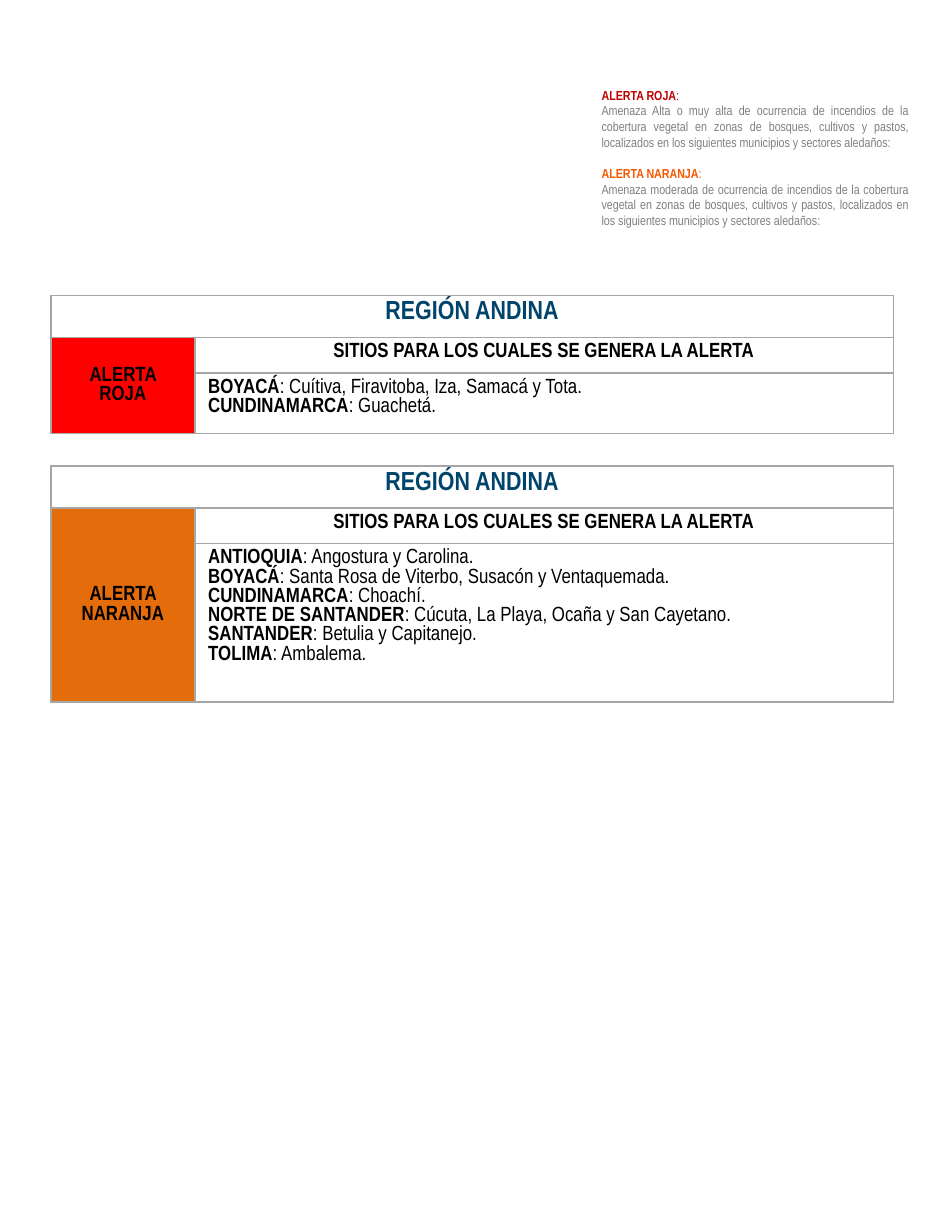
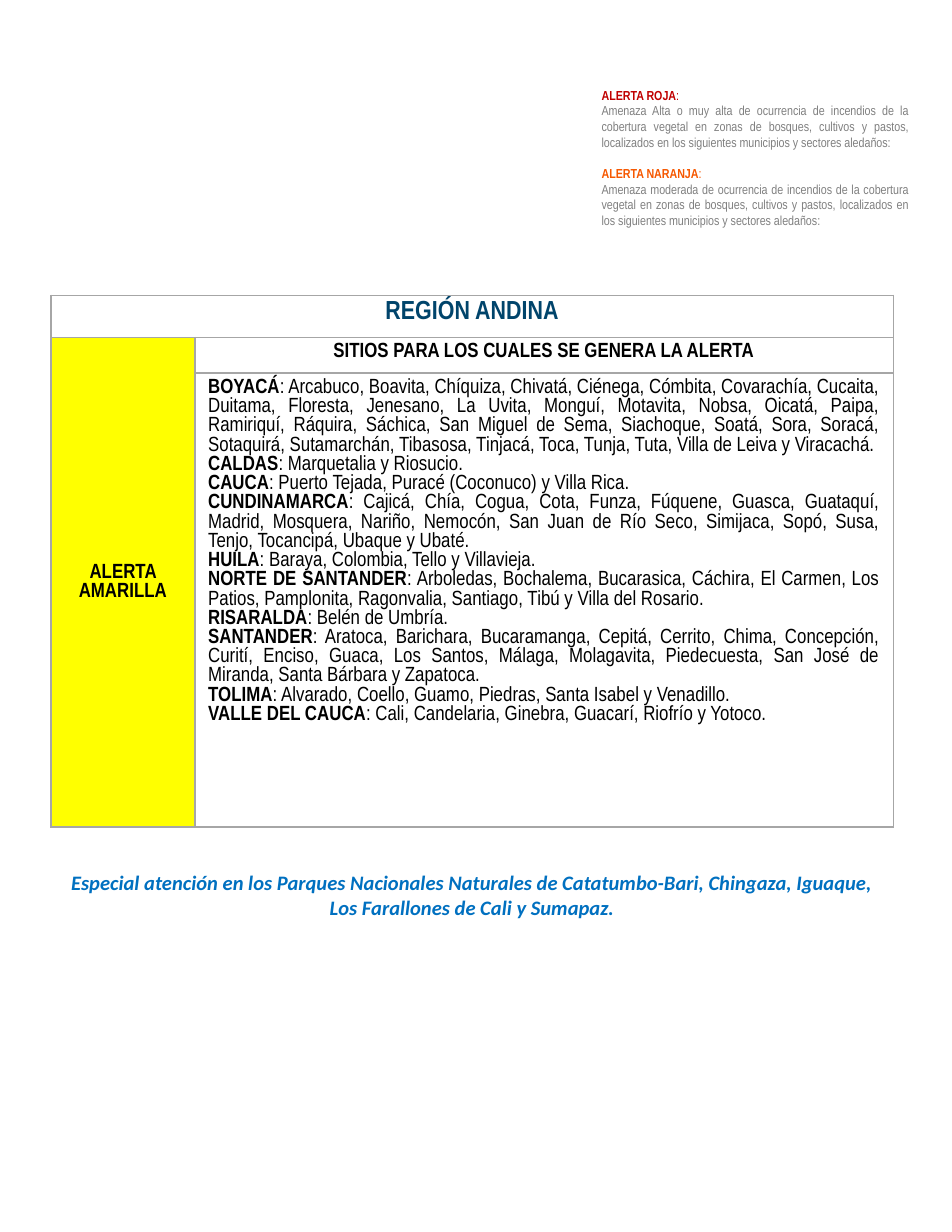
from dataclasses import dataclass

from lxml import etree
from pptx import Presentation
from pptx.dml.color import RGBColor
from pptx.enum.text import MSO_ANCHOR, MSO_AUTO_SIZE, PP_ALIGN
from pptx.oxml.ns import qn
from pptx.util import Inches, Pt

LEFT, CENTER, JUSTIFY = PP_ALIGN.LEFT, PP_ALIGN.CENTER, PP_ALIGN.JUSTIFY
MIDDLE, TOP = MSO_ANCHOR.MIDDLE, MSO_ANCHOR.TOP
FIT_SHAPE = MSO_AUTO_SIZE.SHAPE_TO_FIT_TEXT


@dataclass(frozen=True)
class Theme:
    font: str = "Arial Narrow"
    note_font: str = "Calibri"
    legend_size: float = 7
    body_size: float = 11
    region_size: float = 14
    legend_gap: float = 8.4
    black: str = "000000"
    gray: str = "808080"
    border: str = "A6A6A6"
    region: str = "00446B"
    note: str = "0070C0"
    legend_red: str = "C00000"
    legend_orange: str = "F65800"
    red: str = "FF0000"
    orange: str = "E46C0A"
    yellow: str = "FFFF00"


THEME = Theme()
MM_PER_INCH = 25.4
PAGE_WIDTH, PAGE_HEIGHT = 180 / MM_PER_INCH, 233 / MM_PER_INCH
TABLE_LEFT, TABLE_TOP, TABLE_GAP = 0.38, 2.2, 0.25
COLUMNS = (1.07, 5.2)
HEADER_ROWS = (0.31, 0.26)

REGION = "REGIÓN ANDINA"
SITES_HEADING = "SITIOS PARA LOS CUALES SE GENERA LA ALERTA"
LEGEND = [
    ("ALERTA ROJA", THEME.legend_red,
     "Amenaza Alta o muy alta de ocurrencia de incendios de la cobertura vegetal en zonas de "
     "bosques, cultivos y pastos, localizados en los siguientes municipios y sectores aledaños:"),
    ("ALERTA NARANJA", THEME.legend_orange,
     "Amenaza moderada de ocurrencia de incendios de la cobertura vegetal en zonas de "
     "bosques, cultivos y pastos, localizados en los siguientes municipios y sectores aledaños:"),
]
RED_SITES = [
    ("BOYACÁ", "Cuítiva, Firavitoba, Iza, Samacá y Tota."),
    ("CUNDINAMARCA", "Guachetá."),
]
ORANGE_SITES = [
    ("ANTIOQUIA", "Angostura y Carolina."),
    ("BOYACÁ", "Santa Rosa de Viterbo, Susacón y Ventaquemada."),
    ("CUNDINAMARCA", "Choachí."),
    ("NORTE DE SANTANDER", "Cúcuta, La Playa, Ocaña y San Cayetano."),
    ("SANTANDER", "Betulia y Capitanejo."),
    ("TOLIMA", "Ambalema."),
]
YELLOW_SITES = [
    ("BOYACÁ",
     "Arcabuco, Boavita, Chíquiza, Chivatá, Ciénega, Cómbita, Covarachía, Cucaita, Duitama, "
     "Floresta, Jenesano, La Uvita, Monguí, Motavita, Nobsa, Oicatá, Paipa, Ramiriquí, Ráquira, "
     "Sáchica, San Miguel de Sema, Siachoque, Soatá, Sora, Soracá, Sotaquirá, Sutamarchán, "
     "Tibasosa, Tinjacá, Toca, Tunja, Tuta, Villa de Leiva y Viracachá."),
    ("CALDAS", "Marquetalia y Riosucio."),
    ("CAUCA", "Puerto Tejada, Puracé (Coconuco) y Villa Rica."),
    ("CUNDINAMARCA",
     "Cajicá, Chía, Cogua, Cota, Funza, Fúquene, Guasca, Guataquí, Madrid, Mosquera, Nariño, "
     "Nemocón, San Juan de Río Seco, Simijaca, Sopó, Susa, Tenjo, Tocancipá, Ubaque y Ubaté."),
    ("HUILA", "Baraya, Colombia, Tello y Villavieja."),
    ("NORTE DE SANTANDER",
     "Arboledas, Bochalema, Bucarasica, Cáchira, El Carmen, Los Patios, Pamplonita, "
     "Ragonvalia, Santiago, Tibú y Villa del Rosario."),
    ("RISARALDA", "Belén de Umbría."),
    ("SANTANDER",
     "Aratoca, Barichara, Bucaramanga, Cepitá, Cerrito, Chima, Concepción, Curití, Enciso, "
     "Guaca, Los Santos, Málaga, Molagavita, Piedecuesta, San José de Miranda, Santa Bárbara "
     "y Zapatoca."),
    ("TOLIMA", "Alvarado, Coello, Guamo, Piedras, Santa Isabel y Venadillo."),
    ("VALLE DEL CAUCA", "Cali, Candelaria, Ginebra, Guacarí, Riofrío y Yotoco."),
]
PARKS_NOTE = ("Especial atención en los Parques Nacionales Naturales de Catatumbo-Bari, "
              "Chingaza, Iguaque, Los Farallones de Cali y Sumapaz.")
PAGES = [
    {"alerts": [("ALERTA ROJA", THEME.red, RED_SITES, 0.45),
                ("ALERTA NARANJA", THEME.orange, ORANGE_SITES, 1.18)]},
    {"alerts": [("ALERTA AMARILLA", THEME.yellow, YELLOW_SITES, 3.38)], "note": PARKS_NOTE},
]


def write_paragraph(frame, index, spans, size, align, font=THEME.font, italic=False):
    para = frame.paragraphs[0] if index == 0 else frame.add_paragraph()
    para.alignment = align
    for text, color, bold in spans:
        span = para.add_run()
        span.text = text
        span.font.name = font
        span.font.size = Pt(size)
        span.font.bold = bold
        span.font.italic = italic
        span.font.color.rgb = RGBColor.from_string(color)
    return para


def add_text_box(page, left, top, width, height):
    box = page.shapes.add_textbox(Inches(left), Inches(top), Inches(width), Inches(height))
    box.text_frame.word_wrap = True
    box.text_frame.auto_size = FIT_SHAPE
    return box.text_frame


def add_legend(page):
    frame = add_text_box(page, 4.38, 0.6, 2.48, 1.16)
    for index, (name, color, meaning) in enumerate(LEGEND):
        heading = write_paragraph(frame, 2 * index, [(name, color, True), (":", color, False)],
                                  THEME.legend_size, LEFT)
        if index:
            heading.space_before = Pt(THEME.legend_gap)
        write_paragraph(frame, 2 * index + 1, [(meaning, THEME.gray, False)],
                        THEME.legend_size, JUSTIFY)


def style_cell(cell):
    properties = cell._tc.get_or_add_tcPr()
    for side in ("a:lnL", "a:lnR", "a:lnT", "a:lnB"):
        line = etree.SubElement(properties, qn(side), w=str(Pt(1)))
        fill = etree.SubElement(line, qn("a:solidFill"))
        etree.SubElement(fill, qn("a:srgbClr"), val=THEME.border)
    cell.fill.background()
    cell.margin_left = cell.margin_right = Inches(0.1)
    cell.margin_top = cell.margin_bottom = Inches(0.04)
    cell.vertical_anchor = TOP


def add_alert_table(page, top, name, color, sites, sites_height):
    rows = (*HEADER_ROWS, sites_height)
    table = page.shapes.add_table(len(rows), len(COLUMNS), Inches(TABLE_LEFT), Inches(top),
                                  Inches(sum(COLUMNS)), Inches(sum(rows))).table
    table.first_row = table.horz_banding = False
    for column, width in zip(table.columns, COLUMNS):
        column.width = Inches(width)
    for row, height in zip(table.rows, rows):
        row.height = Inches(height)
    for cell in table.iter_cells():
        style_cell(cell)

    region, alert = table.cell(0, 0), table.cell(1, 0)
    region.merge(table.cell(0, 1))
    alert.merge(table.cell(2, 0))
    alert.fill.solid()
    alert.fill.fore_color.rgb = RGBColor.from_string(color)
    alert.vertical_anchor = MIDDLE

    headings = [(region, REGION, THEME.region, THEME.region_size),
                (alert, name, THEME.black, THEME.body_size),
                (table.cell(1, 1), SITES_HEADING, THEME.black, THEME.body_size)]
    for cell, text, text_color, size in headings:
        write_paragraph(cell.text_frame, 0, [(text, text_color, True)], size, CENTER)
    for index, (department, towns) in enumerate(sites):
        spans = [(department, THEME.black, True), (f": {towns}", THEME.black, False)]
        write_paragraph(table.cell(2, 1).text_frame, index, spans, THEME.body_size, JUSTIFY)
    return top + sum(rows)


def add_note(page, top, text):
    frame = add_text_box(page, TABLE_LEFT, top, sum(COLUMNS), 0.47)
    write_paragraph(frame, 0, [(text, THEME.note, True)], THEME.body_size, CENTER,
                    font=THEME.note_font, italic=True)


def main():
    deck = Presentation()
    deck.slide_width = Inches(PAGE_WIDTH)
    deck.slide_height = Inches(PAGE_HEIGHT)
    blank_layout = deck.slide_layouts[6]
    for content in PAGES:
        page = deck.slides.add_slide(blank_layout)
        add_legend(page)
        top = TABLE_TOP
        for alert in content["alerts"]:
            top = add_alert_table(page, top, *alert) + TABLE_GAP
        if "note" in content:
            add_note(page, top + 0.03, content["note"])
    deck.save("out.pptx")


if __name__ == "__main__":
    main()
